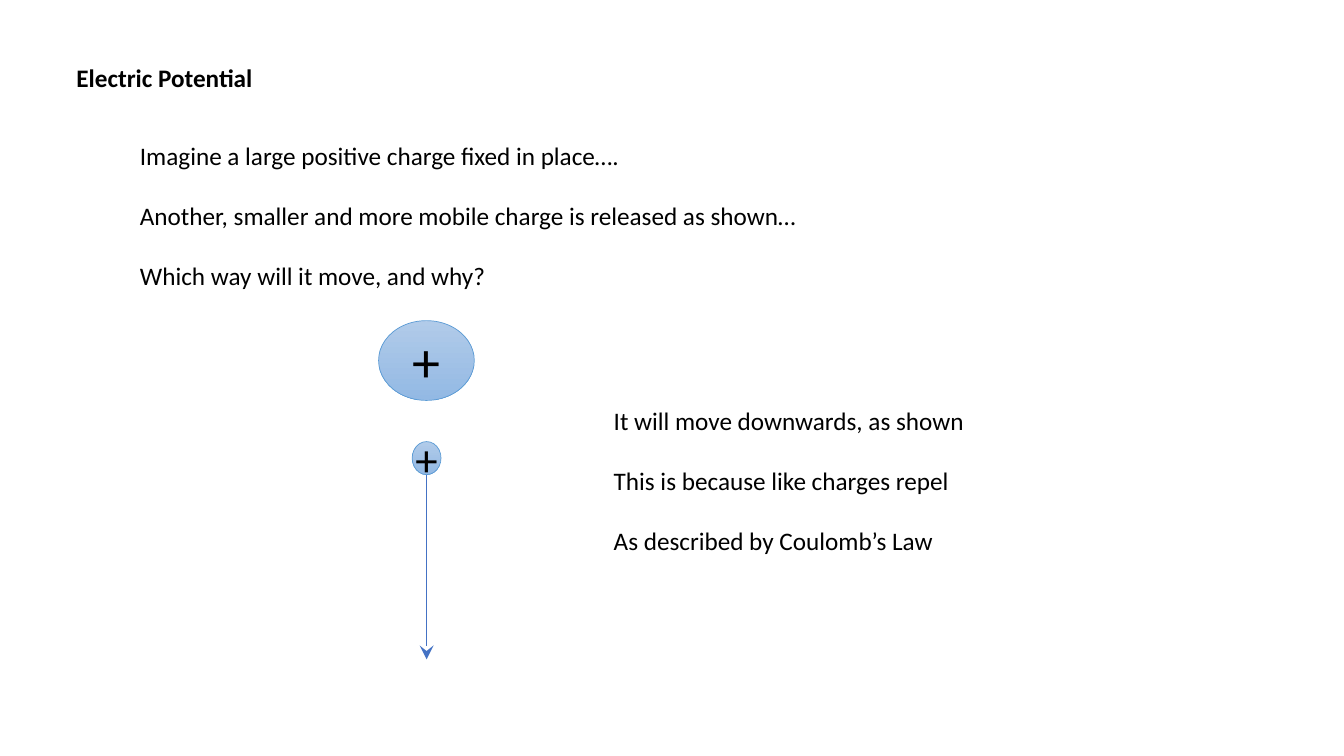
from dataclasses import dataclass

from lxml.etree import SubElement
from pptx import Presentation
from pptx.dml.color import RGBColor
from pptx.enum.shapes import MSO_CONNECTOR as Connector, MSO_SHAPE as Preset
from pptx.enum.text import MSO_ANCHOR as Anchor, PP_ALIGN as Align
from pptx.oxml.ns import qn
from pptx.slide import Slide
from pptx.text.text import TextFrame
from pptx.util import Pt

COLORS = {
    "text": "000000",
    "charge_top": "B1CBE9",
    "charge_bottom": "93B9E4",
    "charge_edge": "5B9BD5",
    "motion": "4472C4",
}
FONT = "Calibri"
LINE_GAP = 21.5


@dataclass(frozen=True)
class Passage:
    left: float
    top: float
    width: float
    height: float
    lines: tuple[str, ...]
    bold: bool = False


@dataclass(frozen=True)
class Charge:
    left: float
    top: float
    width: float
    height: float
    sign_size: float
    sign: str = "+"


PASSAGES = (
    Passage(47.5, 41, 401, 29, ("Electric Potential",), bold=True),
    Passage(92.9, 96.5, 617, 116.6, (
        "Imagine a large positive charge fixed in place….",
        "Another, smaller and more mobile charge is released as shown…",
        "Which way will it move, and why?",
    )),
    Passage(431.3, 285.8, 461.5, 116.6, (
        "It will move downwards, as shown",
        "This is because like charges repel",
        "As described by Coulomb’s Law",
    )),
)
FIXED_CHARGE = Charge(270.4, 229, 68.4, 57, sign_size=40)
MOBILE_CHARGE = Charge(294.4, 315.4, 20.6, 23.6, sign_size=32)
MOTION_END = 471


def color(name: str) -> RGBColor:
    return RGBColor.from_string(COLORS[name])


def write(frame: TextFrame, lines: tuple[str, ...], *, size: float = 18,
          bold: bool = False, align: Align = Align.LEFT,
          anchor: Anchor = Anchor.TOP, wrap: bool = True) -> None:
    frame.word_wrap = wrap
    frame.vertical_anchor = anchor
    for index, line in enumerate(lines):
        paragraph = frame.add_paragraph() if index else frame.paragraphs[0]
        paragraph.alignment = align
        paragraph.space_before = Pt(LINE_GAP if index else 0)
        run = paragraph.add_run()
        run.text = line
        run.font.name = FONT
        run.font.size = Pt(size)
        run.font.bold = bold
        run.font.color.rgb = color("text")


def draw_passage(slide: Slide, passage: Passage) -> None:
    box = slide.shapes.add_textbox(Pt(passage.left), Pt(passage.top),
                                   Pt(passage.width), Pt(passage.height))
    write(box.text_frame, passage.lines, bold=passage.bold)


def draw_charge(slide: Slide, charge: Charge) -> None:
    ball = slide.shapes.add_shape(Preset.OVAL, Pt(charge.left), Pt(charge.top),
                                  Pt(charge.width), Pt(charge.height))
    ball.shadow.inherit = False
    ball.fill.gradient()
    ball.fill.gradient_angle = 270
    for stop, name in zip(ball.fill.gradient_stops, ("charge_top", "charge_bottom")):
        stop.color.rgb = color(name)
    ball.line.color.rgb = color("charge_edge")
    ball.line.width = Pt(0.5)
    frame = ball.text_frame
    frame.margin_left = frame.margin_right = Pt(0)
    frame.margin_top = frame.margin_bottom = Pt(0)
    write(frame, (charge.sign,), size=charge.sign_size,
          align=Align.CENTER, anchor=Anchor.MIDDLE, wrap=False)


def draw_motion(slide: Slide, charge: Charge, end: float) -> None:
    center = Pt(charge.left + charge.width / 2)
    arrow = slide.shapes.add_connector(
        Connector.STRAIGHT, center, Pt(charge.top + charge.height), center, Pt(end))
    arrow.line.color.rgb = color("motion")
    arrow.line.width = Pt(1)
    SubElement(arrow.line._get_or_add_ln(), qn("a:tailEnd"),
               type="stealth", w="lg", len="lg")
    SubElement(arrow._element.spPr, qn("a:effectLst"))


def main() -> None:
    deck = Presentation()
    deck.slide_width, deck.slide_height = Pt(960), Pt(540)
    slide = deck.slides.add_slide(deck.slide_layouts[6])
    for passage in PASSAGES:
        draw_passage(slide, passage)
    for charge in (FIXED_CHARGE, MOBILE_CHARGE):
        draw_charge(slide, charge)
    draw_motion(slide, MOBILE_CHARGE, MOTION_END)
    deck.save("out.pptx")


if __name__ == "__main__":
    main()
